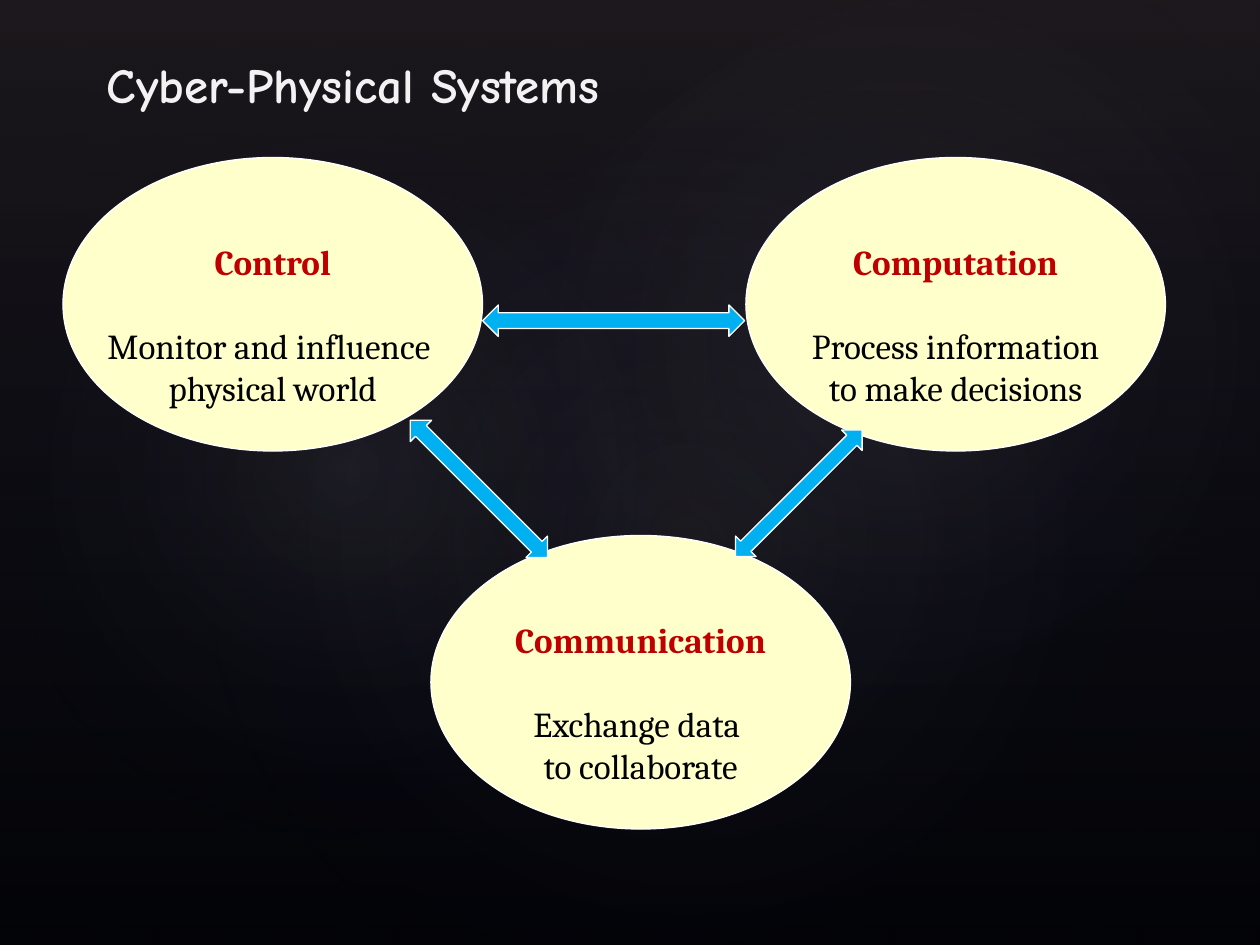
from lxml.etree import SubElement
from pptx import Presentation
from pptx.dml.color import RGBColor
from pptx.enum.shapes import MSO_SHAPE
from pptx.enum.text import MSO_ANCHOR, PP_ALIGN
from pptx.oxml.ns import qn
from pptx.util import Inches, Pt

# Content
TITLE = "Cyber-Physical Systems"
# left, top, text width, heading, lines
TOPICS = [
    (0.5, 1.25, 2.99, "Control", ["Monitor and influence ", "physical world"]),
    (5.92, 1.25, 2.7, "Computation", ["Process information", "to make decisions"]),
    (3.42, 4.25, 2.27, "Communication", ["Exchange data ", "to collaborate"]),
]
# left, top, width, height, rotation
ARROWS = [
    (3.83, 2.42, 2.08, 0.25, 0),
    (3.03, 3.76, 1.54, 0.24, 45),
    (5.63, 3.8, 1.42, 0.23, 315),
]
# left, top, width, height, rotation, opacity in percent
GLOWS = [
    (1.5, 1.14, 7.92, 6.24, 328.7, 7),
    (-0.3, 1.28, 6.06, 4.9, 294.3, 8),
    (3.58, 0.13, 7.09, 5.2, 328.7, 8),
]
OVAL_WIDTH, OVAL_HEIGHT = 3.33, 2.33
TEXT_DROP, TEXT_HEIGHT = 0.61, 1.45


def color(value):
    return RGBColor.from_string(value)


def add_shape(kind, left, top, width, height, fill=None, rotation=0):
    shape = page.shapes.add_shape(
        kind, Inches(left), Inches(top), Inches(width), Inches(height))
    shape.shadow.inherit = False
    shape.rotation = rotation
    if fill:
        shape.fill.solid()
        shape.fill.fore_color.rgb = color(fill)
        shape.line.color.rgb = color("FFFFFF")
        shape.line.width = Pt(0.75)
    else:
        shape.fill.background()
        shape.line.fill.background()
    return shape


def set_gradient(shape, stops, radial=False):
    """Fill with stops of (position, colour, opacity), both numbers in percent."""
    properties = shape.fill._xPr
    gradient = SubElement(properties, qn("a:gradFill"), rotWithShape="1")
    properties.replace(properties.find(qn("a:noFill")), gradient)
    stop_list = SubElement(gradient, qn("a:gsLst"))
    for position, value, opacity in stops:
        stop = SubElement(stop_list, qn("a:gs"), pos=str(position * 1000))
        tint = SubElement(stop, qn("a:srgbClr"), val=value)
        SubElement(tint, qn("a:alpha"), val=str(opacity * 1000))
    if radial:
        circle = SubElement(gradient, qn("a:path"), {"path": "circle"})
        SubElement(circle, qn("a:fillToRect"), l="50000", t="50000", r="50000", b="50000")
    else:
        SubElement(gradient, qn("a:lin"), ang="5400000", scaled="0")


def add_box(left, top, width, height, wrap, anchor=MSO_ANCHOR.TOP):
    box = page.shapes.add_textbox(
        Inches(left), Inches(top), Inches(width), Inches(height))
    box.text_frame.word_wrap = wrap
    box.text_frame.vertical_anchor = anchor
    return box.text_frame


def write(para, text, size=20, font="Cambria", fill="000000", bold=False,
          align=PP_ALIGN.CENTER, before=0):
    para.alignment = align
    para.space_before = Pt(before)
    span = para.add_run()
    span.text = text
    span.font.size = Pt(size)
    span.font.name = font
    span.font.bold = bold
    span.font.color.rgb = color(fill)


deck = Presentation()
deck.slide_width, deck.slide_height = Inches(10), Inches(7.5)
page = deck.slides.add_slide(deck.slide_layouts[6])

# Dark background with soft glows
page.background.fill.solid()
page.background.fill.fore_color.rgb = color("000000")
shade = add_shape(MSO_SHAPE.RECTANGLE, 0, 0, 10, 7.5)
set_gradient(shade, [(0, "504652", 36), (100, "242852", 10)])
for left, top, width, height, rotation, opacity in GLOWS:
    glow = add_shape(MSO_SHAPE.OVAL, left, top, width, height, rotation=rotation)
    set_gradient(glow, [(0, "C4BCC6", opacity), (58, "242852", 0)], radial=True)

# Title
frame = add_box(0.75, 0.17, 8.58, 0.78, True, MSO_ANCHOR.BOTTOM)
write(frame.paragraphs[0], TITLE, size=28, font="Comic Neue", fill="F2F2F2",
      bold=True, align=PP_ALIGN.LEFT)

# Topics: an oval with its text centred across it
for left, top, text_width, heading, lines in TOPICS:
    add_shape(MSO_SHAPE.OVAL, left, top, OVAL_WIDTH, OVAL_HEIGHT, "FFFFCC")
    frame = add_box(left + (OVAL_WIDTH - text_width) / 2, top + TEXT_DROP,
                    text_width, TEXT_HEIGHT, False)
    write(frame.paragraphs[0], heading, fill="C00000", bold=True)
    for index, line in enumerate(lines):
        write(frame.add_paragraph(), line, before=0 if index else 24)

# Two-way arrows between the topics
for left, top, width, height, rotation in ARROWS:
    add_shape(MSO_SHAPE.LEFT_RIGHT_ARROW, left, top, width, height, "00B0F0", rotation)

deck.save("out.pptx")
